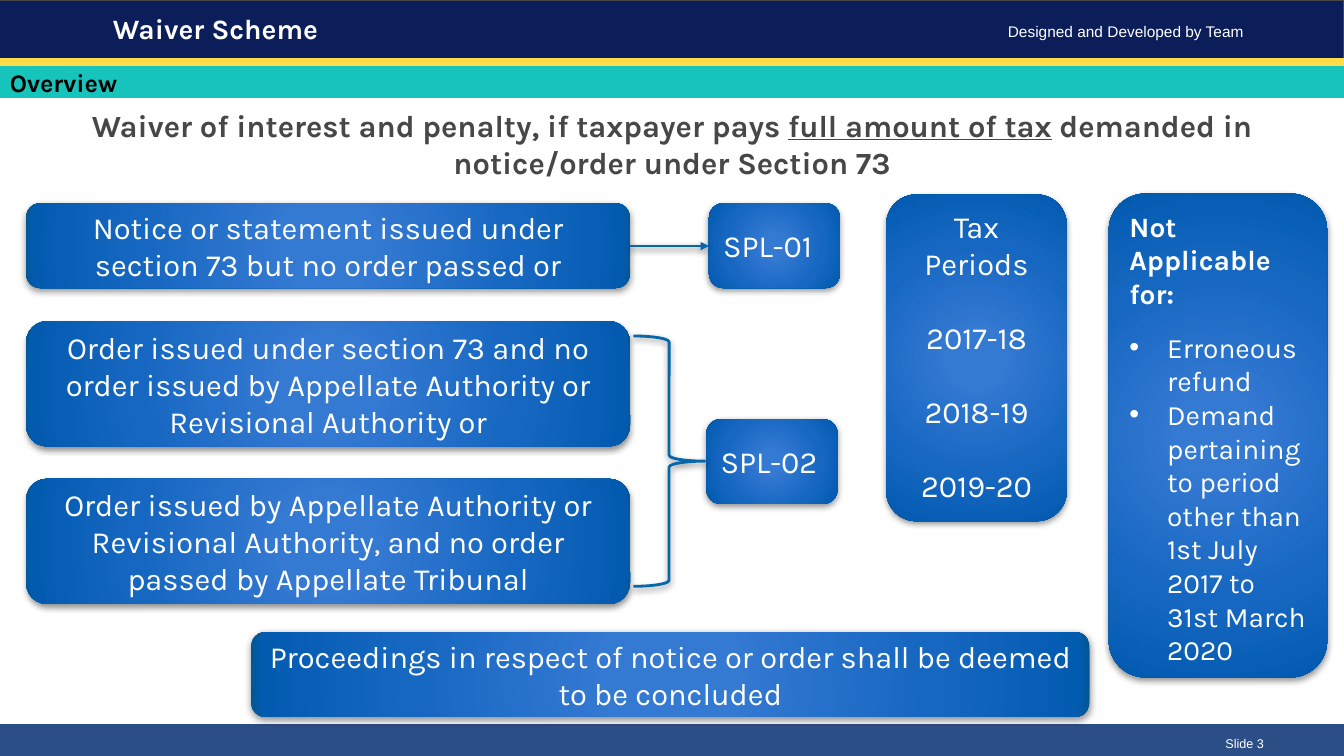
"""Builds the Waiver Scheme overview slide on a grid of 160 columns by 90 rows."""
from dataclasses import dataclass
from typing import NamedTuple

import pptx
import pptx.dml.color
import pptx.enum.shapes
import pptx.enum.text
import pptx.oxml
import pptx.oxml.ns
import pptx.util

RGB = pptx.dml.color.RGBColor
SHAPE = pptx.enum.shapes.MSO_SHAPE
ALIGN = pptx.enum.text.PP_ALIGN
ANCHOR = pptx.enum.text.MSO_ANCHOR
Pt = pptx.util.Pt

NAVY = RGB(0x0B, 0x1E, 0x59)
GREY = RGB(0x47, 0x47, 0x47)
STEEL = RGB(0x2C, 0x4E, 0x86)
YELLOW = RGB(0xFF, 0xDB, 0x49)
TEAL = RGB(0x17, 0xC4, 0xBB)
BLUE = RGB(0x07, 0x68, 0xA9)
WHITE = RGB(0xFF, 0xFF, 0xFF)
BLACK = RGB(0, 0, 0)
GRADIENT = (
    (0, RGB(0x35, 0x7A, 0xD2)),
    (15, RGB(0x34, 0x79, 0xD2)),
    (62, RGB(0x16, 0x67, 0xC1)),
    (97, RGB(0x03, 0x5B, 0xB0)),
    (100, RGB(0x00, 0x56, 0x8F)),
)

WIDTH, HEIGHT = pptx.util.Inches(13.33), pptx.util.Inches(7.5)
COLUMNS, ROWS = 160, 90
NS = pptx.oxml.ns.nsdecls("a")


class Box(NamedTuple):
    """Left, top, width and height in grid columns and rows."""
    col: float
    row: float
    cols: float
    rows: float


class Band(NamedTuple):
    """A full-width strip of the page frame."""
    row: float
    rows: float
    fill: RGB
    line: RGB


@dataclass(frozen=True)
class Run:
    """A stretch of text in one style."""
    text: str
    bold: bool = False
    underline: bool = False


@dataclass(frozen=True)
class Para:
    """A paragraph with its spacing and optional bullet."""
    runs: tuple[Run, ...]
    before: float = 0
    bullet: bool = False


@dataclass(frozen=True)
class Style:
    """Look of a text frame."""
    size: float = 22
    color: RGB = WHITE
    align: ALIGN = ALIGN.CENTER
    anchor: ANCHOR = ANCHOR.MIDDLE
    font: str = "Karla"
    spacing: float = 1.0


@dataclass(frozen=True)
class Card:
    """A rounded blue box."""
    box: Box
    paras: tuple[Para, ...] = ()
    style: Style = Style()


@dataclass(frozen=True)
class Label:
    """Text that stands on its own."""
    box: Box
    para: Para
    style: Style


def x(cols: float) -> int:
    """Turn grid columns into slide units."""
    return round(WIDTH * cols / COLUMNS)


def y(rows: float) -> int:
    """Turn grid rows into slide units."""
    return round(HEIGHT * rows / ROWS)


def place(box: Box) -> tuple[int, int, int, int]:
    """Turn a grid box into slide units."""
    return x(box.col), y(box.row), x(box.cols), y(box.rows)


def line(*runs: Run, before: float = 0) -> Para:
    """Make a plain paragraph."""
    return Para(runs, before)


def write(tf, paras: tuple[Para, ...], style: Style) -> None:
    """Fill a text frame run by run."""
    tf.word_wrap = True
    tf.auto_size = pptx.enum.text.MSO_AUTO_SIZE.NONE
    tf.vertical_anchor = style.anchor
    for i, para in enumerate(paras):
        p = tf.paragraphs[0] if i == 0 else tf.add_paragraph()
        props = p._p.get_or_add_pPr()
        indent = x(4.5) if para.bullet else 0
        props.set("marL", str(indent))
        props.set("indent", str(-indent))
        marks = ('<a:buFont %s typeface="Arial"/>', '<a:buChar %s char="•"/>') if para.bullet else ("<a:buNone %s/>",)
        for mark in marks:
            props.append(pptx.oxml.parse_xml(mark % NS))
        p.alignment = style.align
        p.line_spacing = style.spacing
        p.space_before = Pt(para.before)
        for run in para.runs:
            r = p.add_run()
            r.text = run.text
            r.font.name, r.font.size = style.font, Pt(style.size)
            r.font.bold, r.font.underline = run.bold, run.underline
            r.font.color.rgb = style.color


def add_shadow(sp) -> None:
    """Give a shape or connector a soft shadow below it."""
    sp._element.spPr.append(pptx.oxml.parse_xml(
        f'<a:effectLst {NS}><a:outerShdw blurRad="{Pt(5)}" dist="{Pt(2)}" dir="5400000" rotWithShape="0">'
        '<a:srgbClr val="000000"><a:alpha val="43000"/></a:srgbClr></a:outerShdw></a:effectLst>'))


def add_band(s, band: Band) -> None:
    """Draw one strip of the page frame."""
    sp = s.shapes.add_shape(SHAPE.RECTANGLE, *place(Box(0, band.row, COLUMNS, band.rows)))
    sp.shadow.inherit = False
    sp.fill.solid()
    sp.fill.fore_color.rgb = band.fill
    sp.line.color.rgb = band.line
    sp.line.width = Pt(0.75)


def add_card(s, card: Card) -> None:
    """Draw a rounded box with a radial gradient."""
    sp = s.shapes.add_shape(SHAPE.ROUNDED_RECTANGLE, *place(card.box))
    sp.line.fill.background()
    stops = "".join(f'<a:gs pos="{pos * 1000}"><a:srgbClr val="{color}"/></a:gs>' for pos, color in GRADIENT)
    sp._element.spPr.find(pptx.oxml.ns.qn("a:prstGeom")).addnext(pptx.oxml.parse_xml(
        f'<a:gradFill {NS} rotWithShape="1"><a:gsLst>{stops}</a:gsLst><a:path path="circle">'
        '<a:fillToRect l="50000" t="50000" r="50000" b="50000"/></a:path></a:gradFill>'))
    add_shadow(sp)
    write(sp.text_frame, card.paras, card.style)


def add_label(s, label: Label) -> None:
    """Draw a text box."""
    write(s.shapes.add_textbox(*place(label.box)).text_frame, (label.para,), label.style)


def add_links(s) -> None:
    """Draw the brace and the arrow that lead to the forms."""
    brace = s.shapes.add_shape(SHAPE.RIGHT_BRACE, *place(Box(75.4, 40, 8.5, 29.8)))
    brace.fill.background()
    arrow = s.shapes.add_connector(pptx.enum.shapes.MSO_CONNECTOR.STRAIGHT, x(75), y(29.3), x(84.4), y(29.3))
    for sp in (brace, arrow):
        sp.line.color.rgb = BLUE
        sp.line.width = Pt(2)
        add_shadow(sp)
    arrow.line._get_or_add_ln().append(pptx.oxml.parse_xml(f'<a:tailEnd {NS} type="triangle"/>'))


def fill_placeholder(sp, box: Box, paras: tuple[Para, ...], style: Style) -> None:
    """Move a placeholder to the front, place it and fill it."""
    sp.element.getparent().append(sp.element)
    sp.left, sp.top, sp.width, sp.height = place(box)
    write(sp.text_frame, paras, style)


TOP_LEFT = {"align": ALIGN.LEFT, "anchor": ANCHOR.TOP}
LEFT = Style(align=ALIGN.LEFT)
YEARS = ("2017-18", "2018-19", "2019-20")
BANDS = (Band(0, 7.45, NAVY, GREY), Band(86.3, 3.7, STEEL, STEEL),
         Band(7, 0.85, YELLOW, YELLOW), Band(7.9, 3.75, TEAL, TEAL))
CARDS = (
    Card(Box(3.1, 24.2, 71.9, 10.1), (line(Run("Notice or statement issued under section 73 but no order passed or")),)),
    Card(Box(3.1, 38.25, 71.9, 14.9), (line(Run(
        "Order issued under section 73 and no order issued by Appellate Authority or Revisional Authority or")),)),
    Card(Box(3.1, 57, 71.9, 14.9), (line(Run(
        "Order issued by Appellate Authority or Revisional Authority, and no order passed by Appellate Tribunal")),)),
    Card(Box(84.4, 24.2, 15.6, 10.1), (line(Run("SPL-01")),), LEFT),
    Card(Box(84.1, 49.9, 15.6, 10.1), (line(Run("SPL-02")),), LEFT),
    Card(Box(105.5, 23.15, 21.5, 38.9), (line(Run("Tax Periods")), *(line(Run(year), before=26.4) for year in YEARS)),
         Style(anchor=ANCHOR.TOP)),
    Card(Box(132, 23.05, 26, 57.6)),
    Card(Box(29.9, 75.25, 99.8, 10.1), (line(Run(
        "Proceedings in respect of notice or order shall be deemed to be concluded")),)),
)
LABELS = (
    Label(Box(118.8, 2.05, 40, 3.5), line(Run("Designed and Developed by Team")), Style(11, font="Arial", **TOP_LEFT)),
    Label(Box(144.7, 87, 10.7, 3), line(Run("Slide 3")), Style(9, font="Arial", **TOP_LEFT)),
    Label(Box(0, 7.45, COLUMNS, 4.8), line(Run("Overview", True)), Style(18, BLACK, **TOP_LEFT)),
    Label(Box(0, 12.1, COLUMNS, 10.1), line(
        Run("Waiver of interest and penalty, if taxpayer pays ", True), Run("full amount of tax", True, True),
        Run(" demanded in notice/order under Section 73", True)), Style(22, GREY, anchor=ANCHOR.TOP)),
)
EXCLUSIONS = (
    line(Run("Not Applicable for:", True)),
    Para((Run("Erroneous refund"),), 14.4, True),
    Para((Run("Demand pertaining to period other than 1st July 2017 to 31st March 2020"),), 0, True),
)


def main() -> None:
    """Build and save the slide."""
    prs = pptx.Presentation()
    prs.slide_width, prs.slide_height = WIDTH, HEIGHT
    s = prs.slides.add_slide(prs.slide_layouts[1])
    for band in BANDS:
        add_band(s, band)
    for card in CARDS:
        add_card(s, card)
    add_links(s)
    for label in LABELS:
        add_label(s, label)
    fill_placeholder(s.shapes.title, Box(12.25, 1.2, 129.4, 5), (line(Run("Waiver Scheme", True)),),
                     Style(20, spacing=0.9, **TOP_LEFT))
    fill_placeholder(s.placeholders[1], Box(133.25, 24.3, 23.55, 55.1), EXCLUSIONS, Style(20, **TOP_LEFT))
    prs.save("out.pptx")


if __name__ == "__main__":
    main()
